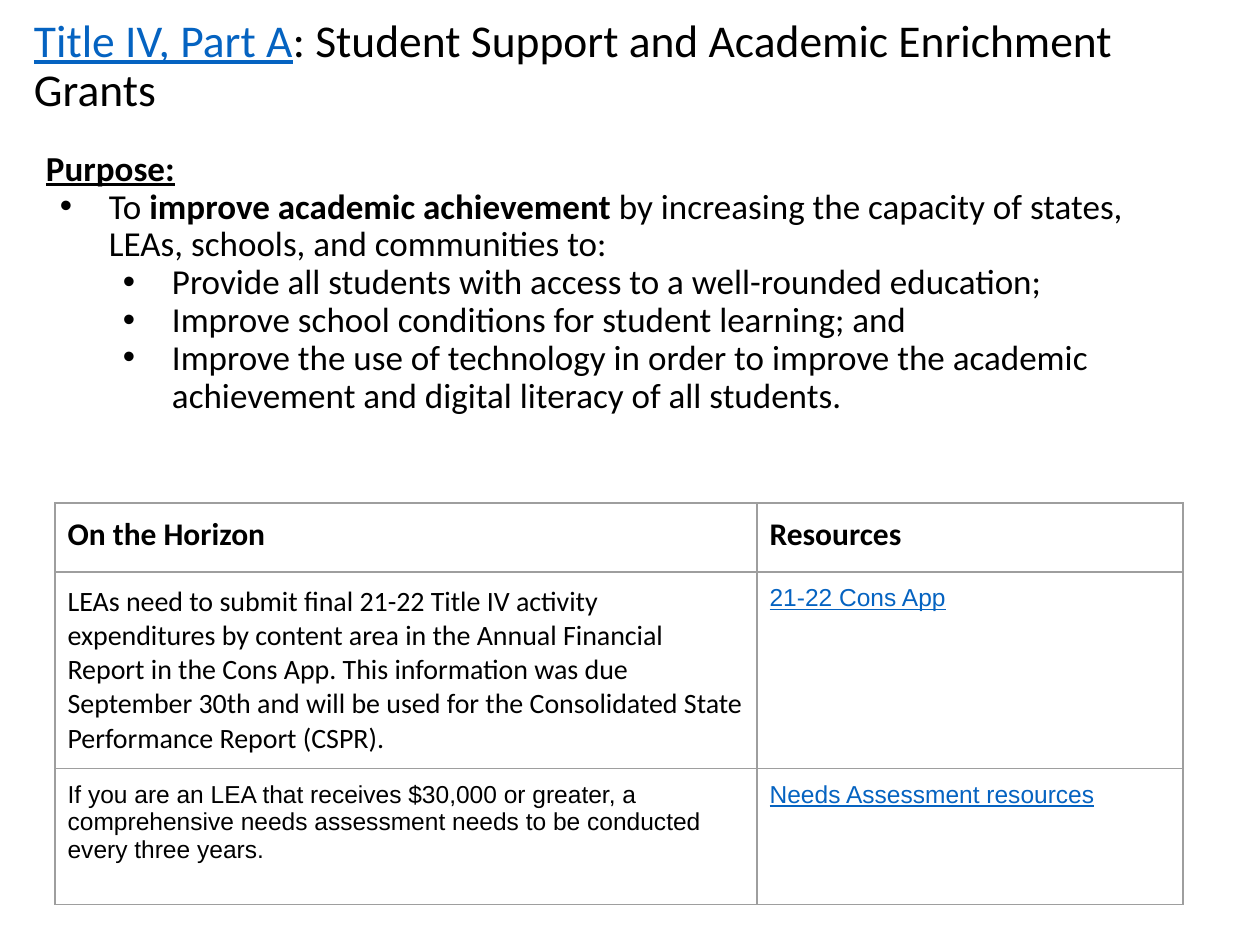
from dataclasses import dataclass

from lxml.etree import SubElement
from pptx import Presentation
from pptx.dml.color import RGBColor
from pptx.enum.text import MSO_ANCHOR as Anchor, MSO_AUTO_SIZE as AutoSize, PP_ALIGN as Align
from pptx.oxml.ns import qn
from pptx.util import Emu, Pt

PX_PER_INCH = 126
BLACK = RGBColor(0x00, 0x00, 0x00)
WHITE = RGBColor(0xFF, 0xFF, 0xFF)
LINK = RGBColor(0x05, 0x63, 0xC1)
GRID = RGBColor(0x9E, 0x9E, 0x9E)


@dataclass
class Style:
    size: int
    font: str = "Calibri"
    color: RGBColor = BLACK
    bold: bool = False
    underline: bool = False


@dataclass
class Item:
    level: int  # 0 is a plain heading, 1 and up are bulleted
    runs: list[tuple[str, Style]]


TITLE = Style(26)
TITLE_LINK = Style(26, color=LINK, underline=True)
HEADING = Style(20, bold=True, underline=True)
TEXT = Style(20)
STRONG = Style(20, bold=True)
HEADER = Style(18, bold=True)
NOTE = Style(16)
SMALL = Style(14, font="Arial")
SMALL_LINK = Style(14, font="Arial", color=LINK, underline=True)

TITLE_RUNS = [
    ("Title IV, Part A", TITLE_LINK),
    (": Student Support and Academic Enrichment Grants", TITLE),
]
PURPOSE = [
    Item(0, [("Purpose:", HEADING)]),
    Item(1, [
        ("To ", TEXT),
        ("improve academic achievement", STRONG),
        (" by increasing the capacity of states, LEAs, schools, and communities to:", TEXT),
    ]),
    Item(2, [("Provide all students with access to a well-rounded education;", TEXT)]),
    Item(2, [("Improve school conditions for student learning; and", TEXT)]),
    Item(2, [("Improve the use of technology in order to improve the academic "
              "achievement and digital literacy of all students.", TEXT)]),
]
COLUMNS = [702, 426]
ROW_HEIGHTS = [69, 196, 136]
ROWS = [
    [("On the Horizon", HEADER), ("Resources", HEADER)],
    [("LEAs need to submit final 21-22 Title IV activity expenditures by content area "
      "in the Annual Financial Report in the Cons App. This information was due "
      "September 30th and will be used for the Consolidated State Performance Report "
      "(CSPR).", NOTE),
     ("21-22 Cons App", SMALL_LINK)],
    [("If you are an LEA that receives $30,000 or greater, a comprehensive needs "
      "assessment needs to be conducted every three years.", SMALL),
     ("Needs Assessment resources", SMALL_LINK)],
]


def px(n: int) -> Emu:
    return Emu(round(n * 914400 / PX_PER_INCH))


def add_run(p, text: str, style: Style) -> None:
    r = p.add_run()
    r.text = text
    r.font.size = Pt(style.size)
    r.font.name = style.font
    r.font.color.rgb = style.color
    r.font.bold = style.bold
    r.font.underline = style.underline


def place(sp, left: int, top: int, width: int, height: int):
    """Position a placeholder and return its text frame without insets."""
    sp.left, sp.top, sp.width, sp.height = map(px, (left, top, width, height))
    tf = sp.text_frame
    tf.margin_left = tf.margin_top = tf.margin_right = tf.margin_bottom = 0
    tf.vertical_anchor = Anchor.TOP
    tf.word_wrap = True
    tf.auto_size = AutoSize.NONE
    return tf


def set_spacing(p) -> None:
    p.alignment = Align.LEFT
    p.line_spacing = 0.9
    p.space_before = p.space_after = Pt(0)


def set_bullet(p, level: int) -> None:
    """Level 0 has no bullet; each further level hangs half an inch deeper."""
    p.level = max(level - 1, 0)
    pPr = p._p.get_or_add_pPr()
    pPr.set("marL", str(px(63 * level)))
    pPr.set("indent", str(px(-49) if level else 0))
    if not level:
        SubElement(pPr, qn("a:buNone"))
        return
    clr = SubElement(pPr, qn("a:buClr"))
    SubElement(clr, qn("a:srgbClr"), val=str(BLACK))
    SubElement(pPr, qn("a:buFont"), typeface="Arial")
    SubElement(pPr, qn("a:buChar"), char="•")


def set_borders(cell, color: RGBColor, width: Pt) -> None:
    tcPr = cell._tc.get_or_add_tcPr()
    for side in ("lnL", "lnR", "lnT", "lnB"):
        ln = SubElement(tcPr, qn(f"a:{side}"), w=str(width))
        fill = SubElement(ln, qn("a:solidFill"))
        SubElement(fill, qn("a:srgbClr"), val=str(color))


def fill_cell(cell, text: str, style: Style) -> None:
    cell.margin_left = cell.margin_top = cell.margin_right = cell.margin_bottom = Pt(7.2)
    cell.vertical_anchor = Anchor.TOP
    set_borders(cell, GRID, Pt(0.75))
    cell.fill.solid()
    cell.fill.fore_color.rgb = WHITE
    add_run(cell.text_frame.paragraphs[0], text, style)


def main() -> None:
    prs = Presentation()
    prs.slide_width, prs.slide_height = px(1260), px(945)
    s = prs.slides.add_slide(prs.slide_layouts[1])

    # Title
    p = place(s.shapes.title, 34, 18, 1207, 123).paragraphs[0]
    set_spacing(p)
    for text, style in TITLE_RUNS:
        add_run(p, text, style)

    # Purpose list
    tf = place(s.placeholders[1], 46, 151, 1147, 630)
    for i, item in enumerate(PURPOSE):
        p = tf.add_paragraph() if i else tf.paragraphs[0]
        set_spacing(p)
        set_bullet(p, item.level)
        for text, style in item.runs:
            add_run(p, text, style)

    # Table of dates and resources
    table = s.shapes.add_table(len(ROWS), len(COLUMNS), px(55), px(503),
                               px(sum(COLUMNS)), px(sum(ROW_HEIGHTS))).table
    table.first_row = table.horz_banding = False
    for column, width in zip(table.columns, COLUMNS):
        column.width = px(width)
    for row, height, contents in zip(table.rows, ROW_HEIGHTS, ROWS):
        row.height = px(height)
        for cell, (text, style) in zip(row.cells, contents):
            fill_cell(cell, text, style)

    prs.save("out.pptx")


if __name__ == "__main__":
    main()
